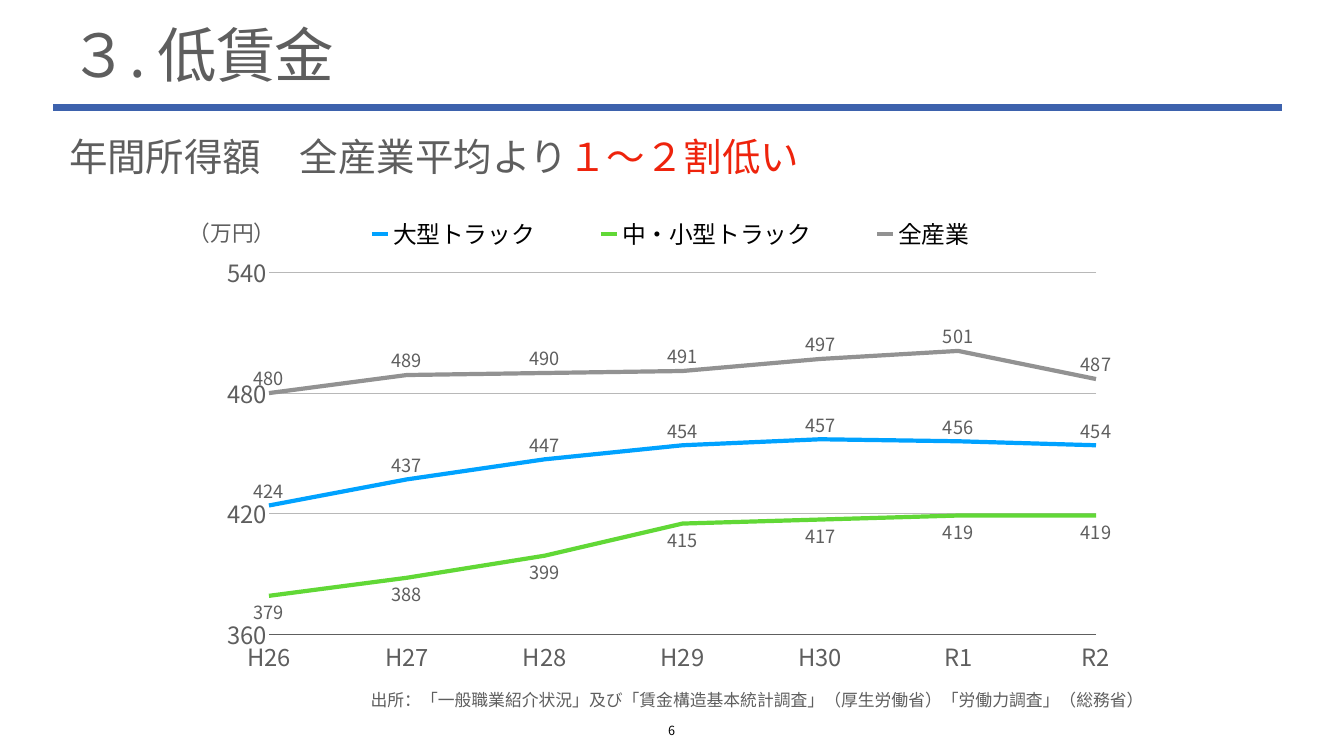
from lxml.etree import SubElement
from pptx import Presentation
from pptx.chart.data import CategoryChartData
from pptx.dml.color import RGBColor
from pptx.enum.chart import XL_CHART_TYPE, XL_LABEL_POSITION as Position
from pptx.enum.chart import XL_LEGEND_POSITION, XL_TICK_LABEL_POSITION, XL_TICK_MARK
from pptx.enum.shapes import MSO_CONNECTOR
from pptx.enum.text import MSO_ANCHOR as Anchor, MSO_AUTO_SIZE, PP_ALIGN as Align
from pptx.oxml import parse_xml
from pptx.oxml.ns import nsdecls, qn
from pptx.util import Pt

FONT = "Noto Sans CJK JP"
GREY, RED, BLACK, BLUE = "5E5E5E", "EE230C", "000000", "3D62AD"

TITLE = [("３. 低賃金", GREY)]
MESSAGE = [("年間所得額　全産業平均より", GREY), ("１〜２割低い", RED)]
SOURCE = [("出所：「一般職業紹介状況」及び「賃金構造基本統計調査」（厚生労働省）「労働力調査」（総務省）", GREY)]
UNIT = [("（万円）", GREY)]
PAGE_NUMBER = [("6", BLACK)]

YEARS = ["H26", "H27", "H28", "H29", "H30", "R1", "R2"]
INCOMES = [
    ("大型トラック", [424, 437, 447, 454, 457, 456, 454], "00A2FF", Position.ABOVE),
    ("中・小型トラック", [379, 388, 399, 415, 417, 419, 419], "61D836", Position.BELOW),
    ("全産業", [480, 489, 490, 491, 497, 501, 487], "929292", Position.ABOVE),
]
PLOT_LAYOUT = dict(x=0.061, y=0.125, w=0.904, h=0.787)
LEGEND_LAYOUT = dict(x=0.11, y=0, w=0.78, h=0.08)


def color(value):
    return RGBColor.from_string(value)


def place(shape, left, top, width, height):
    shape.left, shape.top, shape.width, shape.height = map(Pt, (left, top, width, height))


def write(shape, spans, size, align=Align.LEFT, anchor=Anchor.MIDDLE, wrap=True,
          inset=4.5, line_spacing=1.0, tracking=None):
    """Fill a shape with one paragraph of (text, colour) spans."""
    frame = shape.text_frame
    frame.auto_size = MSO_AUTO_SIZE.NONE
    frame.word_wrap, frame.vertical_anchor = wrap, anchor
    frame.margin_left = frame.margin_right = Pt(inset)
    frame.margin_top = frame.margin_bottom = Pt(inset)
    para = frame.paragraphs[0]
    para.alignment, para.line_spacing = align, line_spacing
    para.space_before = Pt(0)
    for text, shade in spans:
        span = para.add_run()
        span.text = text
        style(span.font, size, shade)
        if tracking is not None:
            span._r.get_or_add_rPr().set("spc", str(round(tracking * 100)))


def style(font, size, shade):
    font.name, font.size, font.bold = FONT, Pt(size), False
    font.color.rgb = color(shade)


def style_line(line, shade, width):
    line.color.rgb, line.width = color(shade), Pt(width)


def use_east_asian_font(root):
    for latin in list(root.iter(qn("a:latin"))):
        latin.addnext(parse_xml(f'<a:ea {nsdecls("a")} typeface="{FONT}"/>'))


def manual_layout(fractions, inner=False):
    target = '<c:layoutTarget val="inner"/>' if inner else ""
    modes = "".join(f'<c:{axis}Mode val="edge"/>' for axis in "xy")
    values = "".join(f'<c:{key} val="{value}"/>' for key, value in fractions.items())
    return parse_xml(f'<c:layout {nsdecls("c")}><c:manualLayout>{target}{modes}{values}'
                     "</c:manualLayout></c:layout>")


def add_income_chart(page):
    data = CategoryChartData(number_format="#,##0")
    data.categories = YEARS
    for name, values, _, _ in INCOMES:
        data.add_series(name, values)
    chart = page.shapes.add_chart(XL_CHART_TYPE.LINE, Pt(304.5), Pt(307.5),
                                  Pt(1307), Pt(656), data).chart
    chart.has_title = False
    style(chart.font, 10, GREY)

    years, amounts = chart.category_axis, chart.value_axis
    for axis in (years, amounts):
        axis.major_tick_mark = axis.minor_tick_mark = XL_TICK_MARK.NONE
        style(axis.tick_labels.font, 34, GREY)
    years.tick_label_position = XL_TICK_LABEL_POSITION.LOW
    style_line(years.format.line, GREY, 1)
    amounts.minimum_scale, amounts.maximum_scale, amounts.major_unit = 360, 540, 60
    amounts.format.line.fill.background()
    style_line(amounts.major_gridlines.format.line, "B8B8B8", 1)

    plot = chart.plots[0]
    plot.vary_by_categories = False
    for series, (_, _, shade, position) in zip(plot.series, INCOMES):
        series.smooth = False
        style_line(series.format.line, shade, 6)
        labels = series.data_labels
        labels.show_value, labels.position = True, position
        labels.number_format, labels.number_format_is_linked = "#,##0", False
        style(labels.font, 26, GREY)

    chart.has_legend = True
    legend = chart.legend
    legend.position, legend.include_in_layout = XL_LEGEND_POSITION.TOP, False
    style(legend.font, 34, BLACK)

    root = chart.element
    area = root.find(".//" + qn("c:plotArea"))
    for old in area.findall(qn("c:layout")):
        area.remove(old)
    area.insert(0, manual_layout(PLOT_LAYOUT, inner=True))
    legend_root = root.find(".//" + qn("c:legend"))
    for old in legend_root.findall(qn("c:layout")):
        legend_root.remove(old)
    legend_root.find(qn("c:legendPos")).addnext(manual_layout(LEGEND_LAYOUT))
    legend_root.find(qn("c:overlay")).set("val", "1")
    # Lines start on the value axis itself
    value_root = area.find(qn("c:valAx"))
    between = value_root.find(qn("c:crossBetween"))
    if between is None:
        between = parse_xml(f'<c:crossBetween {nsdecls("c")}/>')
        value_root.find(qn("c:crosses")).addnext(between)
    between.set("val", "midCat")
    use_east_asian_font(root)


def main():
    deck = Presentation()
    deck.slide_width, deck.slide_height = Pt(1920), Pt(1080)
    page = deck.slides.add_slide(deck.slide_layouts[1])

    title, message = page.placeholders
    place(title, 95, 41, 1730, 113)
    write(title, TITLE, 85, anchor=Anchor.TOP, line_spacing=0.8, tracking=-1.7)
    place(message, 95, 186, 1730, 73)
    write(message, MESSAGE, 55, inset=3.6)
    properties = message.text_frame.paragraphs[0]._p.get_or_add_pPr()
    properties.set("marL", "0")
    properties.set("indent", "0")
    SubElement(properties, qn("a:buNone"))

    add_income_chart(page)

    def add_text(left, top, width, height, spans, size, **options):
        box = page.shapes.add_textbox(Pt(left), Pt(top), Pt(width), Pt(height))
        write(box, spans, size, **options)

    add_text(525, 983, 1119, 32, SOURCE, 24)
    add_text(265, 312.5, 133, 40, UNIT, 31, align=Align.CENTER, wrap=False)
    add_text(949, 1033, 21, 26, PAGE_NUMBER, 18, align=Align.CENTER,
             anchor=Anchor.BOTTOM, wrap=False)

    rule = page.shapes.add_connector(MSO_CONNECTOR.STRAIGHT, Pt(76), Pt(154), Pt(1831), Pt(154))
    style_line(rule.line, BLUE, 10)
    SubElement(rule.element.spPr, qn("a:effectLst"))

    use_east_asian_font(page.element)
    deck.save("out.pptx")


if __name__ == "__main__":
    main()
